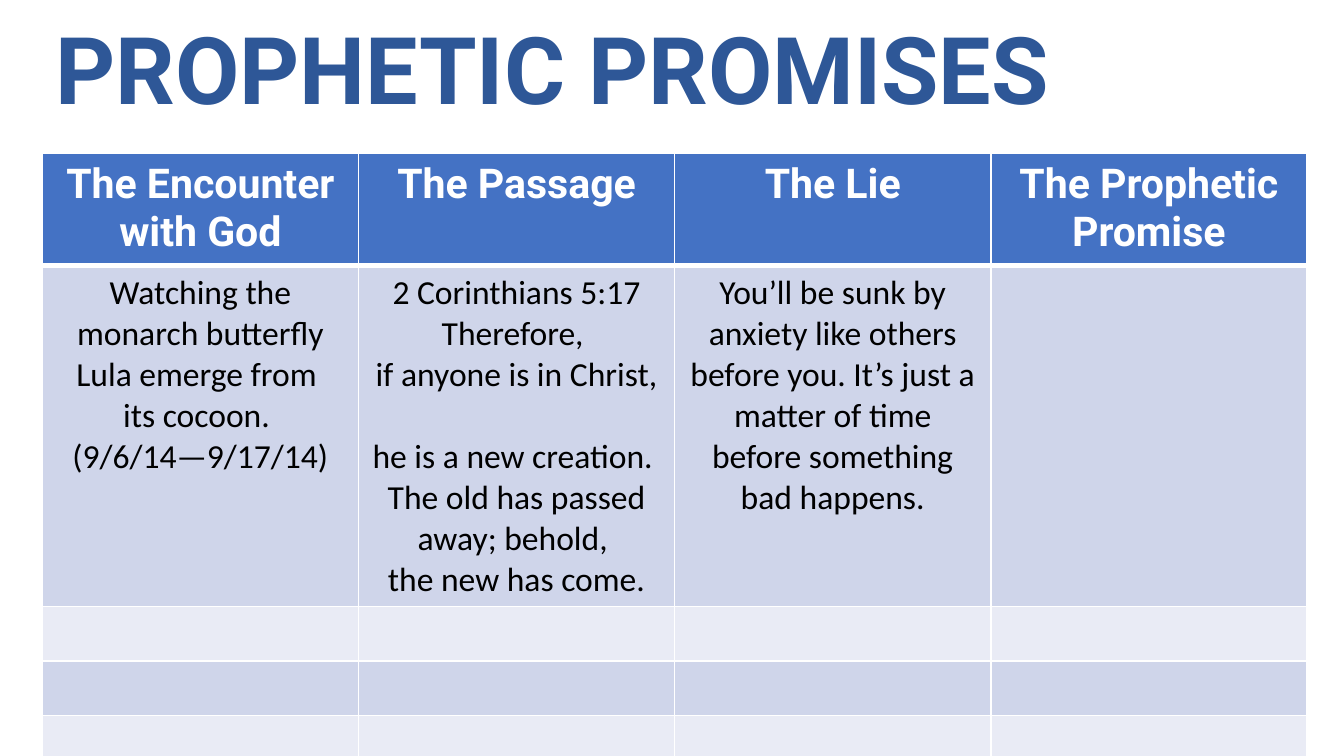
from lxml import etree
from pptx import Presentation
from pptx.dml.color import RGBColor
from pptx.enum.text import MSO_ANCHOR, PP_ALIGN
from pptx.oxml.ns import qn
from pptx.util import Cm, Pt

COLORS = {
    "title": "2E5797",
    "header": "4472C4",
    "band_dark": "CFD5EA",
    "band_light": "E9EBF5",
    "white": "FFFFFF",
    "black": "000000",
}
HEADERS = ["The Encounter with God", "The Passage", "The Lie", "The Prophetic Promise"]
ENTRY = [
    "Watching the monarch butterfly Lula emerge from \vits cocoon. \v(9/6/14—9/17/14)",
    "2 Corinthians 5:17 Therefore, \vif anyone is in Christ, \vhe is a new creation. "
    "\vThe old has passed away; behold, \vthe new has come.",
    "You’ll be sunk by anxiety like others before you. It’s just a matter of time "
    "before something bad happens.",
    "",
]
ROWS = [HEADERS, ENTRY] + [[""] * 4 for _ in range(3)]
ROW_HEIGHTS = [2.07, 6.45, 1.03, 1.03, 1.03]


def rgb(name):
    return RGBColor.from_string(COLORS[name])


def style_font(font, name, size, color, bold):
    font.name = name
    font.size = Pt(size)
    font.bold = bold
    font.color.rgb = rgb(color)


def set_borders(cell, bottom_width):
    tcPr = cell._tc.get_or_add_tcPr()
    widths = {"a:lnL": 1, "a:lnR": 1, "a:lnT": 1, "a:lnB": bottom_width}
    for i, (tag, width) in enumerate(widths.items()):
        ln = etree.Element(qn(tag), w=str(Pt(width)))
        fill = etree.SubElement(ln, qn("a:solidFill"))
        etree.SubElement(fill, qn("a:srgbClr"), val=COLORS["white"])
        tcPr.insert(i, ln)


def add_title(s, left, top, width, height):
    sp = s.shapes.add_textbox(Cm(left), Cm(top), Cm(width), Cm(height))
    tf = sp.text_frame
    tf.word_wrap = True
    tf.vertical_anchor = MSO_ANCHOR.MIDDLE
    tf.text = "PROPHETIC PROMISES"
    p = tf.paragraphs[0]
    p.line_spacing = 0.9
    style_font(p.runs[0].font, "Roboto", 50, "title", True)


def fill_cell(cell, text, row):
    is_header = row == 0
    cell.fill.solid()
    band = "band_dark" if row % 2 else "band_light"
    cell.fill.fore_color.rgb = rgb("header" if is_header else band)
    set_borders(cell, 3 if is_header else 1)
    tf = cell.text_frame
    tf.text = text
    p = tf.paragraphs[0]
    p.alignment = PP_ALIGN.CENTER
    p.font.size = Pt(18)
    for r in p.runs:
        if is_header:
            style_font(r.font, "Roboto", 22, "white", True)
        else:
            style_font(r.font, "Calibri", 18, "black", False)


def add_promise_table(s, left, top, width):
    sp = s.shapes.add_table(
        len(ROWS), len(HEADERS), Cm(left), Cm(top), Cm(width), Cm(sum(ROW_HEIGHTS))
    )
    table = sp.table
    for column in table.columns:
        column.width = Cm(width / len(HEADERS))
    for i, texts in enumerate(ROWS):
        table.rows[i].height = Cm(ROW_HEIGHTS[i])
        for j, text in enumerate(texts):
            fill_cell(table.cell(i, j), text, i)


def main():
    prs = Presentation()
    prs.slide_width = Cm(25.4)
    prs.slide_height = Cm(14.29)
    s = prs.slides.add_slide(prs.slide_layouts[6])
    add_title(s, 0.8, 0.3, 24.4, 2.2)
    add_promise_table(s, 0.8, 2.9, 23.9)
    prs.save("out.pptx")


if __name__ == "__main__":
    main()
